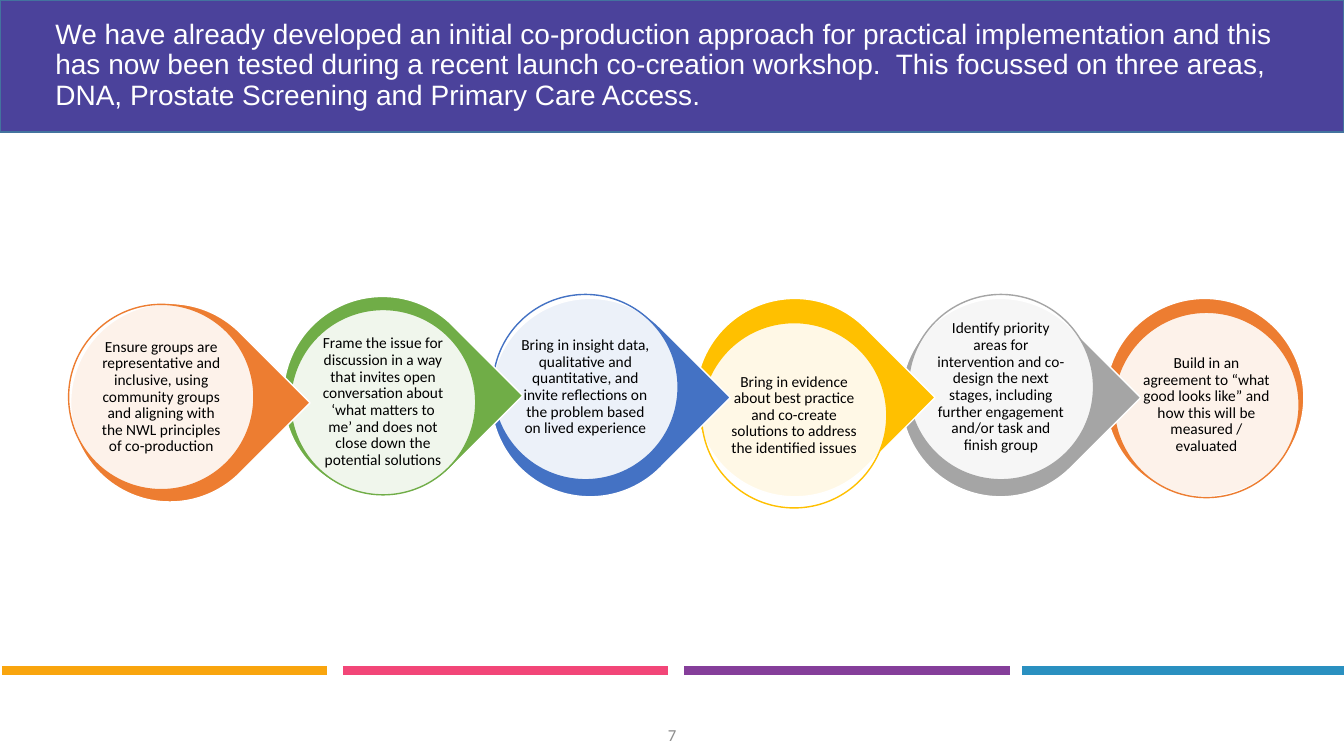
from lxml import etree
from pptx import Presentation
from pptx.dml import color
from pptx.enum import shapes, text
from pptx.oxml import ns
from pptx.util import Cm, Pt

COLORS = {
    "banner": "4B429B", "banner_edge": "43739E", "white": "FFFFFF",
    "black": "000000", "number": "8C8C8C", "orange": "ED7D31",
    "green": "70AD47", "blue": "4472C4", "yellow": "FFC000",
    "grey": "A5A5A5", "bar_amber": "F9A50E", "bar_pink": "F24678",
    "bar_purple": "853E9A", "bar_blue": "2A90C0",
}
TITLE = ("We have already developed an initial co-production approach for practical "
         "implementation and this has now been tested during a recent launch co-creation "
         "workshop.  This focussed on three areas, DNA, Prostate Screening and Primary "
         "Care Access.")
DROP, DISC, LABEL = 5.0, 4.67, 3.33
STEPS = [
    ("orange", (1.78, 7.65), (1.73, 7.67),
     "Ensure groups are representative and inclusive, using community groups and "
     "aligning with the NWL principles of co-production"),
    ("green", (7.14, 7.47), (7.32, 7.8),
     "Frame the issue for discussion in a way that invites open conversation about "
     "‘what matters to me’ and does not close down the potential solutions"),
    ("blue", (12.37, 7.52), (12.42, 7.42),
     "Bring in insight data, qualitative and quantitative, and invite reflections on "
     "the problem based on lived experience"),
    ("yellow", (17.53, 7.52), (17.68, 8.13),
     "Bring in evidence about best practice and co-create solutions to address the "
     "identified issues"),
    ("grey", (22.71, 7.52), (22.89, 7.42),
     "Identify priority areas for intervention and co-design the next stages, "
     "including further engagement and/or task and finish group"),
    ("orange", (27.86, 7.52), (28.07, 7.87),
     "Build in an agreement to “what good looks like” and how this will be "
     "measured / evaluated"),
]
BARS = [("bar_amber", 0.05), ("bar_pink", 8.64), ("bar_purple", 17.25), ("bar_blue", 25.76)]


def rgb(name):
    """Return the named colour."""
    return color.RGBColor.from_string(COLORS[name])


def add_filled(parent, kind, box, fill, line):
    """Add a flat preset shape in a box given in centimetres."""
    sp = parent.shapes.add_shape(kind, *map(Cm, box))
    sp.shadow.inherit = False
    sp.fill.solid()
    sp.fill.fore_color.rgb = rgb(fill)
    sp.line.color.rgb = rgb(line)
    sp.line.width = Pt(1)
    return sp


def write(tf, words, font, size, ink, align, spacing):
    """Fill a wrapped, vertically centred text frame with one paragraph."""
    tf.word_wrap = True
    tf.auto_size = text.MSO_AUTO_SIZE.NONE
    tf.vertical_anchor = text.MSO_ANCHOR.MIDDLE
    p = tf.paragraphs[0]
    p.text = words
    p.alignment = align
    p.line_spacing = spacing
    p.font.name = font
    p.font.size = Pt(size)
    p.font.color.rgb = rgb(ink)


def add_header(s, box):
    """Place the banner with the title in front of it."""
    left, top, width, height = box
    add_filled(s, shapes.MSO_SHAPE.RECTANGLE, box, "banner", "banner_edge")
    title = s.shapes.title
    s.shapes._spTree.append(title._element)
    title.left, title.top = Cm(left + 1.14), Cm(top + 0.91)
    title.width, title.height = Cm(width - 2.27), Cm(height - 1.83)
    write(title.text_frame, TITLE, "Arial", 20, "white", text.PP_ALIGN.LEFT, 0.9)


def add_step(group, step, is_last):
    """Place one step: a drop, a pale disc and its label."""
    hue, drop_at, disc_at, words = step
    kind = shapes.MSO_SHAPE.OVAL if is_last else shapes.MSO_SHAPE.TEAR
    drop = add_filled(group, kind, (*drop_at, DROP, DROP), hue, "white")
    drop.rotation = 0 if is_last else 45
    disc = add_filled(group, shapes.MSO_SHAPE.OVAL, (*disc_at, DISC, DISC), "white", hue)
    paint = disc._element.spPr.find(ns.qn("a:solidFill"))[0]
    etree.SubElement(paint, ns.qn("a:alpha"), val="90000")
    inset = (DISC - LABEL) / 2
    label = group.shapes.add_textbox(Cm(disc_at[0] + inset), Cm(disc_at[1] + inset),
                                     Cm(LABEL), Cm(LABEL))
    tf = label.text_frame
    tf.margin_left = tf.margin_right = tf.margin_top = tf.margin_bottom = Cm(0.05)
    write(tf, words, "Calibri", 11, "black", text.PP_ALIGN.CENTER, 0.9)


def add_process(s):
    """Place the chain of steps, each overlapping the next one."""
    group = s.shapes.add_group_shape()
    for step in reversed(STEPS):
        add_step(group, step, step is STEPS[-1])


def add_footer(s, top, bar_width):
    """Place the coloured bars and the page number."""
    for hue, left in BARS:
        bar = s.shapes.add_connector(shapes.MSO_CONNECTOR.STRAIGHT, Cm(left), Cm(top),
                                     Cm(left + bar_width), Cm(top))
        bar.line.color.rgb = rgb(hue)
        bar.line.width = Pt(6)
        etree.SubElement(bar._element.spPr, ns.qn("a:effectLst"))
    number = s.shapes.add_textbox(Cm(13.13), Cm(top + 1.11), Cm(7.62), Cm(1.02))
    write(number.text_frame, "7", "Calibri", 12, "number", text.PP_ALIGN.CENTER, 1.0)


def main():
    """Build and save the slide."""
    prs = Presentation()
    prs.slide_width, prs.slide_height = Cm(33.87), Cm(19.05)
    s = prs.slides.add_slide(prs.slide_layouts[5])
    add_header(s, (0, 0, 33.87, 3.33))
    add_process(s)
    add_footer(s, 16.9, 8.2)
    prs.save("out.pptx")


if __name__ == "__main__":
    main()
